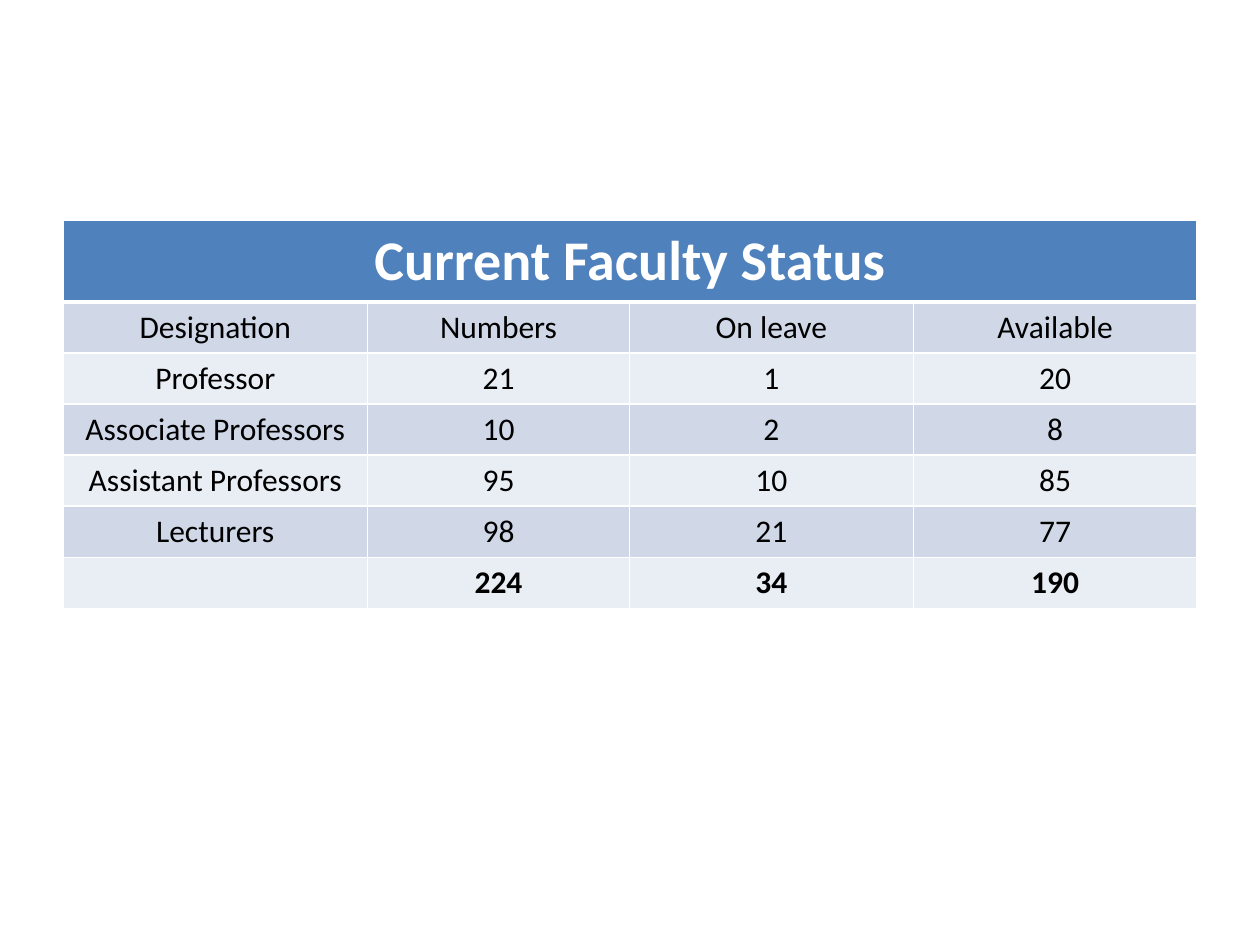
from lxml.etree import SubElement
from pptx import Presentation
from pptx.dml.color import RGBColor
from pptx.enum.text import PP_ALIGN
from pptx.oxml.ns import qn
from pptx.util import Cm, Pt

tints = {"head": "4F81BD", "dark": "D0D8E8", "light": "E9EDF4",
         "white": "FFFFFF", "black": "000000"}
data = [
    ["Current Faculty Status", "", "", ""],
    ["Designation", "Numbers", "On leave", "Available"],
    ["Professor", "21", "1", "20"],
    ["Associate Professors", "10", "2", "8"],
    ["Assistant Professors", "95", "10", "85"],
    ["Lecturers", "98", "21", "77"],
    ["", "224", "34", "190"],
]
widths = [6.14, 5.28, 5.72, 5.72]
last = len(data) - 1


def edge(cell, side, width):
    line = SubElement(cell._tc.get_or_add_tcPr(), qn("a:ln" + side), w=str(Pt(width)))
    fill = SubElement(line, qn("a:solidFill"))
    SubElement(fill, qn("a:srgbClr"), val=tints["white"])


# Slide
deck = Presentation()
deck.slide_width, deck.slide_height = Cm(25.4), Cm(19.05)
slide = deck.slides.add_slide(deck.slide_layouts[6])

# Table grid
frame = slide.shapes.add_table(len(data), len(widths), Cm(1.27), Cm(4.45),
                               Cm(sum(widths)), Cm(7.8))
table = frame.table
for col, width in zip(table.columns, widths):
    col.width = Cm(width)
for row in table.rows:
    row.height = Cm(1.03)
table.cell(0, 0).merge(table.cell(0, len(widths) - 1))

# Cells: title row, banded rows, bold totals
for r, texts in enumerate(data):
    tint = "head" if r == 0 else "dark" if r % 2 else "light"
    for c, text in enumerate(texts):
        cell = table.cell(r, c)
        for side in "LRTB":
            thick = (r, side) in [(0, "B"), (1, "T")]
            edge(cell, side, 3 if thick else 1)
        cell.fill.solid()
        cell.fill.fore_color.rgb = RGBColor.from_string(tints[tint])
        if not text:
            continue
        cell.text = text
        para = cell.text_frame.paragraphs[0]
        para.alignment = PP_ALIGN.CENTER
        font = para.font
        font.name = "Calibri"
        font.size = Pt(18 if r else 32)
        font.bold = r in (0, last)
        font.color.rgb = RGBColor.from_string(tints["black" if r else "white"])

deck.save("out.pptx")
